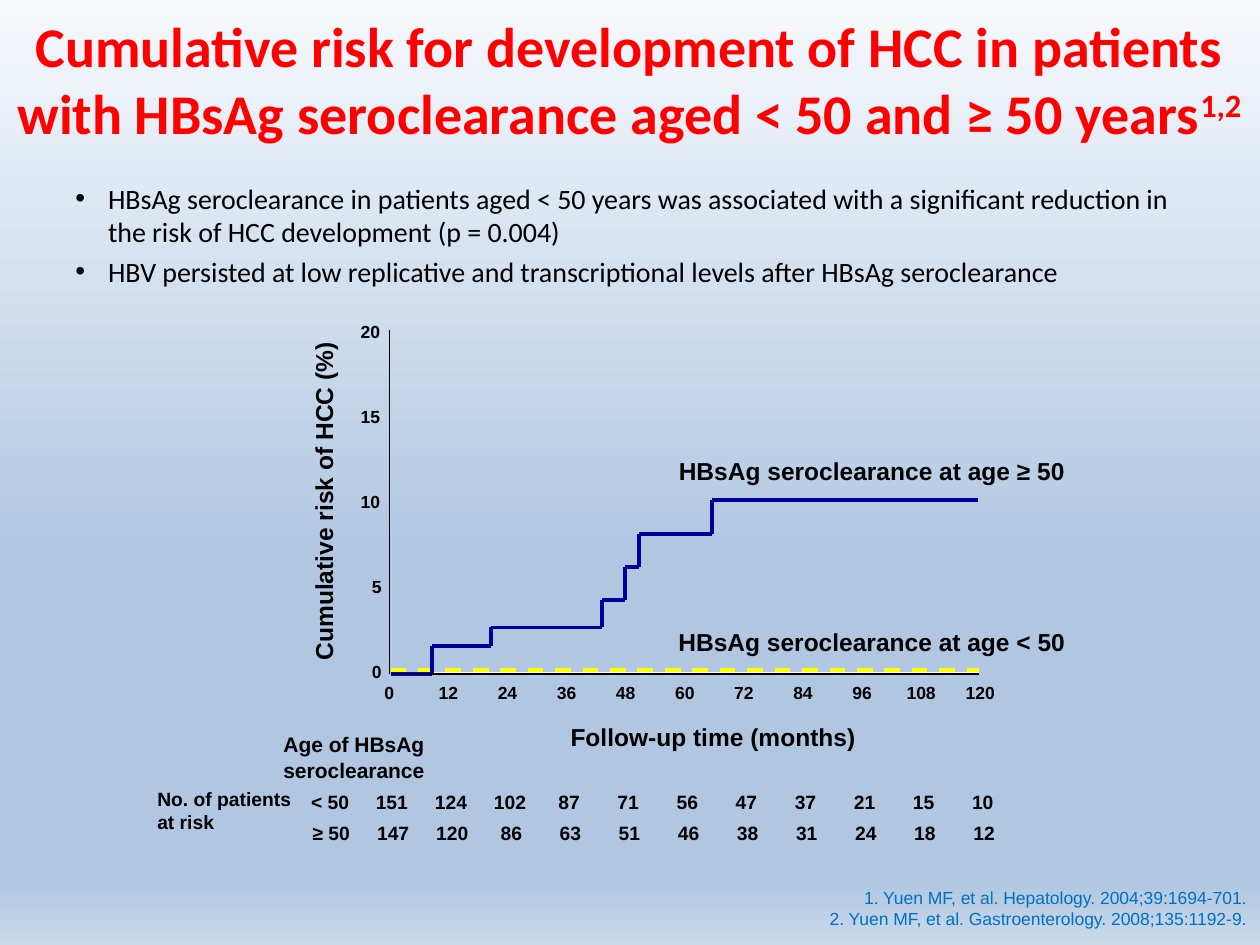
from itertools import pairwise

from lxml import etree
from pptx import Presentation
from pptx import util as u
from pptx.dml.color import RGBColor
from pptx.enum import dml, shapes, text
from pptx.oxml.ns import qn

BLACK, NAVY, YELLOW = "000000", "000099", "FFFF00"
CENTER, LEFT, RIGHT = text.PP_ALIGN.CENTER, text.PP_ALIGN.LEFT, text.PP_ALIGN.RIGHT

ORIGIN_X, BASE_Y = 3.1, 5.35
AXIS_END = 7.77
COLUMN = 0.469          # width of twelve months
LABEL_ZERO_Y = 5.33     # centre of the label for 0 %
PERCENT = 0.135         # height of one percent

# Corners of the stepped risk curve for age >= 50, after its flat start
RISK_STEPS = [(3.43, 5.35), (3.43, 5.13), (3.9, 5.13), (3.9, 4.98),
              (4.78, 4.98), (4.78, 4.76), (4.96, 4.76), (4.96, 4.5),
              (5.07, 4.5), (5.07, 4.24), (5.65, 4.24), (5.65, 3.97),
              (7.76, 3.97)]

# label, label centre, first column centre, row centre, patients
AT_RISK = [
    ("< 50", 2.62, 3.11, 6.365, [151, 124, 102, 87, 71, 56, 47, 37, 21, 15, 10]),
    ("≥ 50", 2.63, 3.12, 6.615, [147, 120, 86, 63, 51, 46, 38, 31, 24, 18, 12]),
]


def rgb(hex_color):
    return RGBColor.from_string(hex_color)


def style(frame, size, color=BLACK, font="Arial", bold=False, align=LEFT):
    for paragraph in frame.paragraphs:
        paragraph.alignment = align
        for run in paragraph.runs:
            run.font.size = u.Pt(size)
            run.font.name = font
            run.font.bold = bold
            run.font.color.rgb = rgb(color)


def add_text(slide, wording, left, top, width, height, wrap=False):
    box = slide.shapes.add_textbox(*map(u.Inches, (left, top, width, height)))
    box.text_frame.word_wrap = wrap
    box.text_frame.text = wording
    return box


def add_label(slide, wording, x, y, size, width, height):
    """Bold chart label centred on the point x, y."""
    label = add_text(slide, wording, x - width / 2, y - height / 2, width, height)
    style(label.text_frame, size, bold=True, align=CENTER)
    return label


def add_number(slide, number, x, y, size):
    digits = str(number)
    add_label(slide, digits, x, y, size, 0.2 + 0.008 * size * len(digits),
              0.1 + 0.017 * size)


def add_line(slide, start, end, color=BLACK, width=0.75, dashed=False):
    line = slide.shapes.add_connector(
        shapes.MSO_CONNECTOR.STRAIGHT, *map(u.Inches, (*start, *end)))
    line.line.color.rgb = rgb(color)
    line.line.width = u.Pt(width)
    if dashed:
        line.line.dash_style = dml.MSO_LINE.DASH
    etree.SubElement(line._element.spPr, qn("a:effectLst"))


def set_background(slide):
    fill = slide.background.fill
    fill.gradient()
    fill.gradient_angle = 270
    stops = slide._element.find(".//" + qn("a:gsLst"))
    for stop in list(stops):
        stops.remove(stop)
    for share, color in [(0, "F6F9FC"), (60, "B0C6E1"), (93, "B0C6E1"), (100, "CAD9EB")]:
        stop = etree.SubElement(stops, qn("a:gs"), pos=str(share * 1000))
        etree.SubElement(stop, qn("a:srgbClr"), val=color)


def set_title(slide):
    title = slide.shapes.title
    title.left, title.top = 0, 0
    title.width, title.height = u.Inches(9.99), u.Inches(1.25)
    frame = title.text_frame
    frame.text = ("Cumulative risk for development of HCC in patients with HBsAg "
                  "seroclearance aged < 50 and ≥ 50 years")
    frame.vertical_anchor = text.MSO_ANCHOR.MIDDLE
    frame.word_wrap = True
    citation = frame.paragraphs[0].add_run()
    citation.text = "1,2"
    style(frame, 32, "FF0000", "Calibri", True, CENTER)
    citation.font._element.set("baseline", "30000")


def add_findings(slide):
    findings = add_text(
        slide,
        "HBsAg seroclearance in patients aged < 50 years was associated with a "
        "significant reduction in the risk of HCC development (p = 0.004)\n"
        "HBV persisted at low replicative and transcriptional levels after "
        "HBsAg seroclearance", 0.5, 1.39, 9, 1.09, wrap=True)
    frame = findings.text_frame
    for paragraph in frame.paragraphs:
        properties = paragraph._p.get_or_add_pPr()
        properties.set("marL", str(u.Inches(0.26)))
        properties.set("indent", str(u.Inches(-0.26)))
        etree.SubElement(properties, qn("a:buFont"), typeface="Arial")
        etree.SubElement(properties, qn("a:buChar"), char="•")
    frame.paragraphs[1].space_before = u.Pt(3.2)
    style(frame, 16, font="Calibri")


def draw_curves(slide):
    add_line(slide, (ORIGIN_X, 5.34), (AXIS_END, 5.34), "FFFFFF")
    add_line(slide, (3.09, BASE_Y), (3.09, 2.62))
    add_line(slide, (ORIGIN_X, 5.32), (AXIS_END, 5.32), YELLOW, 2.25, dashed=True)
    add_line(slide, (ORIGIN_X, BASE_Y), RISK_STEPS[0], "0000FF", 2.25)
    for start, end in pairwise(RISK_STEPS):
        add_line(slide, start, end, NAVY, 2.25)
    add_line(slide, (ORIGIN_X, BASE_Y), (AXIS_END, BASE_Y))


def label_axes(slide):
    for column in range(11):
        add_number(slide, 12 * column, 3.09 + column * COLUMN, 5.495, 10)
    for risk in range(0, 21, 5):
        x = 2.99 if risk < 10 else 2.94
        add_number(slide, risk, x, LABEL_ZERO_Y - risk * PERCENT, 10)
    add_label(slide, "HBsAg seroclearance at age ≥ 50", 6.92, 3.74, 14, 3.28, 0.34)
    add_label(slide, "HBsAg seroclearance at age < 50", 6.92, 5.1, 14, 3.28, 0.34)
    add_label(slide, "Follow-up time (months)", 5.66, 5.85, 14, 2.47, 0.34)
    risk_title = add_label(slide, "Cumulative risk of HCC (%)", 2.57, 3.98, 14, 2.74, 0.34)
    risk_title.rotation = 270


def add_patients_at_risk(slide):
    for age, age_x, first_x, y, patients in AT_RISK:
        add_label(slide, age, age_x, y, 11, 0.5, 0.29)
        for column, number in enumerate(patients):
            add_number(slide, number, first_x + column * COLUMN, y, 11)
    heading = add_text(slide, "No. of patients\nat risk", 1.15, 6.2, 1.44, 0.47, wrap=True)
    style(heading.text_frame, 11, bold=True)
    add_label(slide, "Age of HBsAg\nseroclearance", 2.81, 6.015, 12, 1.33, 0.51)


def add_references(slide):
    references = add_text(
        slide, "1. Yuen MF, et al. Hepatology. 2004;39:1694-701.\v"
        "2. Yuen MF, et al. Gastroenterology. 2008;135:1192-9.", 6.12, 6.99, 3.87, 0.44)
    style(references.text_frame, 10, "0070C0", align=RIGHT)


def main():
    deck = Presentation()
    deck.slide_width, deck.slide_height = u.Inches(10), u.Inches(7.5)
    slide = deck.slides.add_slide(deck.slide_layouts[5])
    set_background(slide)
    set_title(slide)
    add_findings(slide)
    add_references(slide)
    draw_curves(slide)
    label_axes(slide)
    add_patients_at_risk(slide)
    deck.save("out.pptx")


if __name__ == "__main__":
    main()
